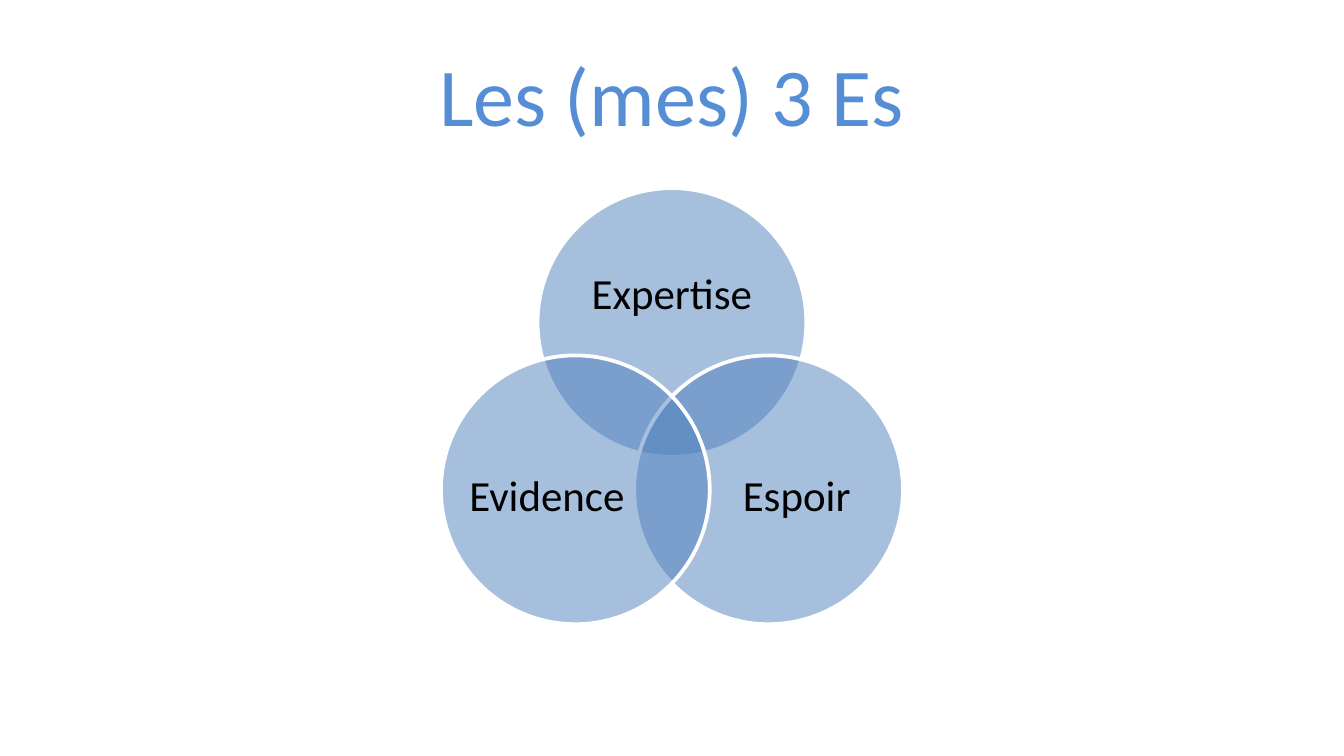
import math

from lxml import etree
from pptx import Presentation
from pptx.dml.color import RGBColor
from pptx.enum.shapes import MSO_SHAPE
from pptx.enum.text import MSO_ANCHOR, PP_ALIGN
from pptx.oxml.ns import qn
from pptx.util import Inches, Pt

CENTER = PP_ALIGN.CENTER
MIDDLE = MSO_ANCHOR.MIDDLE
OVAL = MSO_SHAPE.OVAL

TITLE = "Les (mes) 3 Es"
# label, angle of the circle around the centre, label offset and label size
CIRCLES = [
    ("Expertise", -90, (0, -0.2), (1.47, 0.9)),
    ("Espoir", 30, (0.21, 0.06), (1.2, 1.1)),
    ("Evidence", 150, (-0.21, 0.06), (1.2, 1.1)),
]
COLORS = {"title": "558ED5", "circle": "4F81BD", "outline": "FFFFFF", "label": "000000"}
FONT = "Calibri"
PAGE_WIDTH = 10
PAGE_HEIGHT = PAGE_WIDTH * 9 / 16
CENTER_X, CENTER_Y = PAGE_WIDTH / 2, 3.23
ORBIT = 0.83
DIAMETER = 2
OPACITY = 50


def color(name):
    return RGBColor.from_string(COLORS[name])


def centered(x, y, width, height):
    """Return left, top, width and height of a frame centred on x, y."""
    return [Inches(value) for value in (x - width / 2, y - height / 2, width, height)]


def write(box, text, size, color_name):
    frame = box.text_frame
    frame.word_wrap = True
    frame.vertical_anchor = MIDDLE
    para = frame.paragraphs[0]
    para.text = text
    para.alignment = CENTER
    para.font.name = FONT
    para.font.size = Pt(size)
    para.font.color.rgb = color(color_name)
    return para


def add_circle(group, x, y):
    circle = group.shapes.add_shape(OVAL, *centered(x, y, DIAMETER, DIAMETER))
    circle.shadow.inherit = False
    circle.fill.solid()
    circle.fill.fore_color.rgb = color("circle")
    fill_color = circle.fill._xPr.find(qn("a:solidFill"))[0]
    etree.SubElement(fill_color, qn("a:alpha"), val=str(OPACITY * 1000))
    circle.line.color.rgb = color("outline")
    circle.line.width = Pt(2)


def add_label(group, text, x, y, size):
    box = group.shapes.add_textbox(*centered(x, y, *size))
    frame = box.text_frame
    frame.margin_left = frame.margin_right = frame.margin_top = frame.margin_bottom = 0
    write(box, text, 23, "label").line_spacing = 0.9


def main():
    deck = Presentation()
    deck.slide_width, deck.slide_height = Inches(PAGE_WIDTH), Inches(PAGE_HEIGHT)
    page = deck.slides.add_slide(deck.slide_layouts[5])

    title = page.shapes.title
    title.left, title.top, title.width, title.height = centered(CENTER_X, 0.7, 9, 0.94)
    write(title, TITLE, 44, "title")

    venn = page.shapes.add_group_shape()
    for text, angle, (shift_x, shift_y), size in CIRCLES:
        x = CENTER_X + ORBIT * math.cos(math.radians(angle))
        y = CENTER_Y + ORBIT * math.sin(math.radians(angle))
        add_circle(venn, x, y)
        add_label(venn, text, x + shift_x, y + shift_y, size)

    deck.save("out.pptx")


if __name__ == "__main__":
    main()
